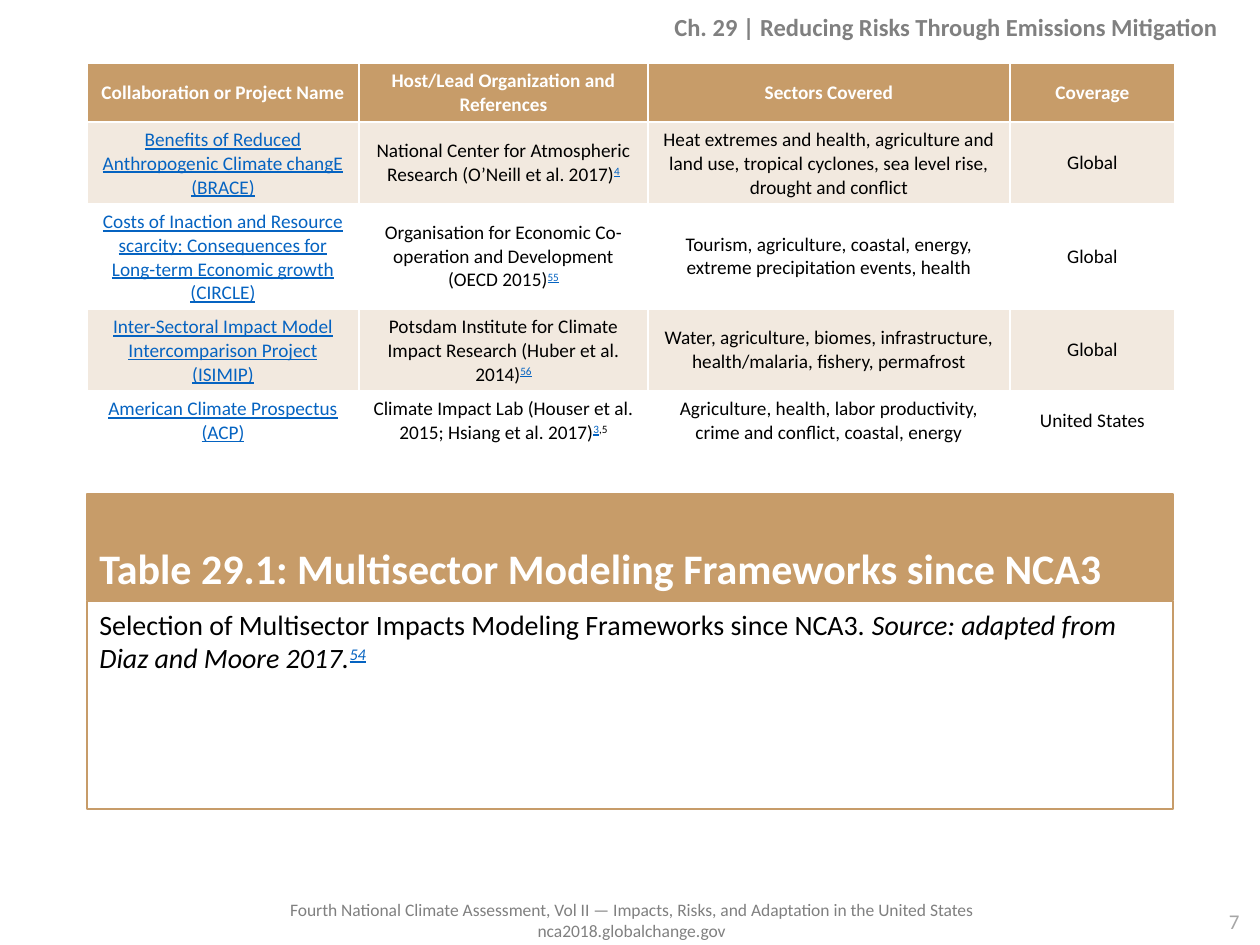
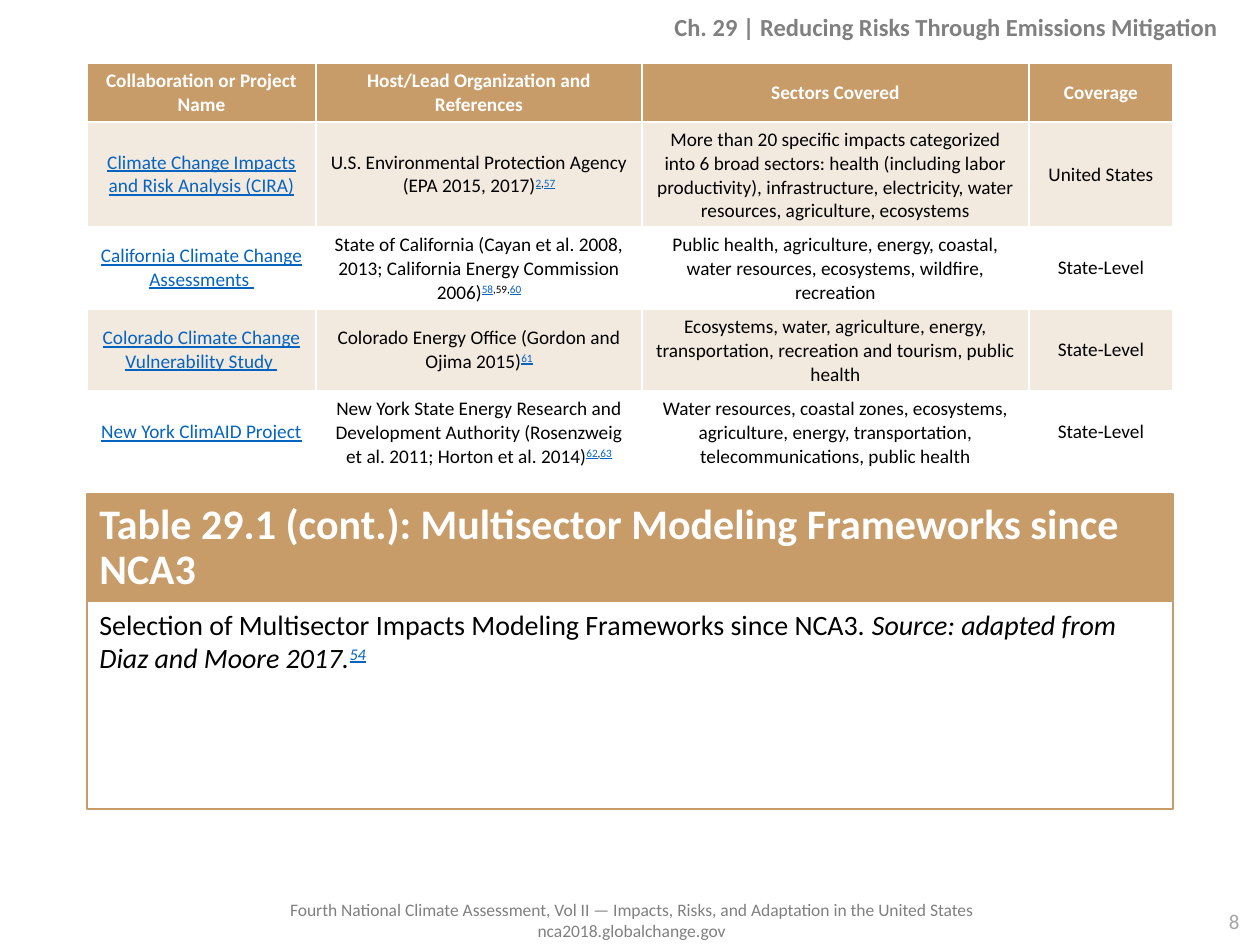
from dataclasses import dataclass

from lxml.etree import SubElement
from pptx import Presentation
from pptx.dml.color import RGBColor
from pptx.enum.shapes import MSO_SHAPE
from pptx.enum.text import MSO_ANCHOR, PP_ALIGN
from pptx.oxml.ns import qn
from pptx.util import Emu, Pt

CHAPTER = "Ch. 29 | Reducing Risks Through Emissions Mitigation"
FOOTER = [
    "Fourth National Climate Assessment, Vol II — Impacts, Risks, and Adaptation in the United States",
    "nca2018.globalchange.gov",
]
CAPTION = [
    ("Selection of Multisector Impacts Modeling Frameworks since NCA3. ", "plain"),
    ("Source: adapted from Diaz and Moore 2017.", "italic"),
    ("54", "italic cite"),
]
HEADINGS = [
    "Collaboration or Project Name",
    "Host/Lead Organization and References",
    "Sectors Covered",
    "Coverage",
]
SLIDES = [
    {
        "number": 7,
        "title": "Table 29.1: Multisector Modeling Frameworks since NCA3",
        "columns": [272, 289, 362, 165],
        "table_height": 387,
        "projects": [
            ("Benefits of Reduced Anthropogenic Climate changE (BRACE)",
             [("National Center for Atmospheric Research (O’Neill et al. 2017)", "plain"), ("4", "cite")],
             "Heat extremes and health, agriculture and land use, tropical cyclones, sea level rise, "
             "drought and conflict",
             "Global"),
            ("Costs of Inaction and Resource scarcity: Consequences for Long-term Economic growth (CIRCLE)",
             [("Organisation for Economic Co-operation and Development (OECD 2015)", "plain"), ("55", "cite")],
             "Tourism, agriculture, coastal, energy, extreme precipitation events, health",
             "Global"),
            ("Inter-Sectoral Impact Model Intercomparison Project (ISIMIP)",
             [("Potsdam Institute for Climate Impact Research (Huber et al. 2014)", "plain"), ("56", "cite")],
             "Water, agriculture, biomes, infrastructure, health/malaria, fishery, permafrost",
             "Global"),
            ("American Climate Prospectus (ACP)",
             [("Climate Impact Lab (Houser et al. 2015; Hsiang et al. 2017)", "plain"),
              ("3", "cite"), (",5", "raised")],
             "Agriculture, health, labor productivity, crime and conflict, coastal, energy",
             "United States"),
        ],
    },
    {
        "number": 8,
        "title": "Table 29.1 (cont.): Multisector Modeling Frameworks since NCA3",
        "columns": [229, 326, 387, 144],
        "table_height": 410,
        "projects": [
            ("Climate Change Impacts and Risk Analysis (CIRA)",
             [("U.S. Environmental Protection Agency (EPA 2015, 2017)", "plain"),
              ("2", "cite"), (",", "raised"), ("57", "cite")],
             "More than 20 specific impacts categorized into 6 broad sectors: health (including labor "
             "productivity), infrastructure, electricity, water resources, agriculture, ecosystems",
             "United States"),
            ("California Climate Change Assessments ",
             [("State of California (Cayan et al. 2008, 2013; California Energy Commission 2006)", "plain"),
              ("58", "cite"), (",59,", "raised"), ("60", "cite")],
             "Public health, agriculture, energy, coastal, water resources, ecosystems, wildfire, recreation",
             "State-Level"),
            ("Colorado Climate Change Vulnerability Study ",
             [("Colorado Energy Office (Gordon and Ojima 2015)", "plain"), ("61", "cite")],
             "Ecosystems, water, agriculture, energy, transportation, recreation and tourism, public health",
             "State-Level"),
            ("New York ClimAID Project ",
             [("New York State Energy Research and Development Authority "
               "(Rosenzweig et al. 2011; Horton et al. 2014)", "plain"),
              ("62", "cite"), (",", "raised"), ("63", "cite")],
             "Water resources, coastal zones, ecosystems, agriculture, energy, transportation, "
             "telecommunications, public health",
             "State-Level"),
        ],
    },
]


@dataclass(frozen=True)
class Theme:
    font: str = "Calibri"
    accent: str = "C79C69"
    band: str = "F2E9DF"
    white: str = "FFFFFF"
    text: str = "000000"
    link: str = "0563C1"
    muted: str = "808080"
    faint: str = "A6A6A6"
    title_size: int = 24
    caption_size: int = 16
    chapter_size: int = 14
    number_size: int = 12
    table_size: int = 11
    footer_size: int = 10


THEME = Theme()
LEFT, WIDTH = 87, 1086
TABLE_TOP, ROW_HEIGHT = 63, 52


def px(value):
    return Emu(round(value * 914400 / 126))


def color(value):
    return RGBColor.from_string(value)


def write(frame, paragraphs, size, fill=THEME.text, bold=False,
          align=PP_ALIGN.LEFT, spacing=None, after=0):
    frame.word_wrap = True
    for index, content in enumerate(paragraphs):
        paragraph = frame.paragraphs[0] if index == 0 else frame.add_paragraph()
        paragraph.alignment = align
        paragraph.space_after = Pt(after)
        if spacing:
            paragraph.line_spacing = spacing
        runs = [(content, "plain")] if isinstance(content, str) else content
        for text, style in runs:
            run = paragraph.add_run()
            run.text = text
            font = run.font
            font.name, font.size, font.bold = THEME.font, Pt(size), bold
            styles = style.split()
            linked = "cite" in styles or "link" in styles
            font.color.rgb = color(THEME.link if linked else fill)
            font.underline = linked
            font.italic = "italic" in styles
            if "cite" in styles or "raised" in styles:
                run._r.get_or_add_rPr().set("baseline", "30000")


def add_text(slide, box, paragraphs, anchor=MSO_ANCHOR.TOP, **text_format):
    shape = slide.shapes.add_textbox(*map(px, box))
    shape.text_frame.vertical_anchor = anchor
    write(shape.text_frame, paragraphs, **text_format)


def add_panel(slide, box, paragraphs, anchor, background=None, **text_format):
    shape = slide.shapes.add_shape(MSO_SHAPE.RECTANGLE, *map(px, box))
    shape.shadow.inherit = False
    if background:
        shape.fill.solid()
        shape.fill.fore_color.rgb = color(background)
    else:
        shape.fill.background()
    shape.line.color.rgb = color(THEME.accent)
    shape.line.width = Pt(1.5)
    shape.text_frame.vertical_anchor = anchor
    write(shape.text_frame, paragraphs, **text_format)


def add_borders(cell):
    properties = cell._tc.get_or_add_tcPr()
    for index, side in enumerate(("lnL", "lnR", "lnT", "lnB")):
        line = SubElement(properties, qn(f"a:{side}"), w=str(Pt(1)))
        fill = SubElement(line, qn("a:solidFill"))
        SubElement(fill, qn("a:srgbClr"), val=THEME.white)
        properties.insert(index, line)


def add_projects(slide, columns, projects, height):
    rows = [HEADINGS] + [
        ([(name, "link")], host, sectors, coverage)
        for name, host, sectors, coverage in projects
    ]
    frame = slide.shapes.add_table(
        len(rows), len(columns), px(LEFT), px(TABLE_TOP), px(sum(columns)), px(height))
    table = frame.table
    table.horz_banding = False
    for column, width in zip(table.columns, columns):
        column.width = px(width)
    for row_index, row in enumerate(rows):
        table.rows[row_index].height = px(ROW_HEIGHT)
        header = row_index == 0
        background = THEME.accent if header else (THEME.white, THEME.band)[row_index % 2]
        for column_index, content in enumerate(row):
            cell = table.cell(row_index, column_index)
            cell.fill.solid()
            cell.fill.fore_color.rgb = color(background)
            cell.vertical_anchor = MSO_ANCHOR.MIDDLE
            add_borders(cell)
            write(cell.text_frame, [content], size=THEME.table_size, bold=header,
                  fill=THEME.white if header else THEME.text, align=PP_ALIGN.CENTER)
    frame.height = px(height)


def add_frame(slide, number):
    add_text(slide, (256, 893, 751, 55), FOOTER, size=THEME.footer_size,
             fill=THEME.muted, align=PP_ALIGN.CENTER)
    add_text(slide, (1011, 902, 241, 34), [str(number)], size=THEME.number_size,
             fill=THEME.faint, align=PP_ALIGN.RIGHT)
    add_text(slide, (29, 9, 1201, 39), [CHAPTER], anchor=MSO_ANCHOR.MIDDLE,
             size=THEME.chapter_size, fill=THEME.muted, bold=True,
             align=PP_ALIGN.RIGHT, spacing=0.9)


def main():
    presentation = Presentation()
    presentation.slide_width, presentation.slide_height = px(1260), px(945)
    for content in SLIDES:
        slide = presentation.slides.add_slide(presentation.slide_layouts[6])
        add_frame(slide, content["number"])
        add_panel(slide, (LEFT, 494, WIDTH, 106), [content["title"]], MSO_ANCHOR.BOTTOM,
                  background=THEME.accent, size=THEME.title_size, fill=THEME.white,
                  bold=True, spacing=0.9)
        add_panel(slide, (LEFT, 601, WIDTH, 208), [CAPTION], MSO_ANCHOR.TOP,
                  size=THEME.caption_size, after=6)
        add_projects(slide, content["columns"], content["projects"], content["table_height"])
    presentation.save("out.pptx")


if __name__ == "__main__":
    main()
